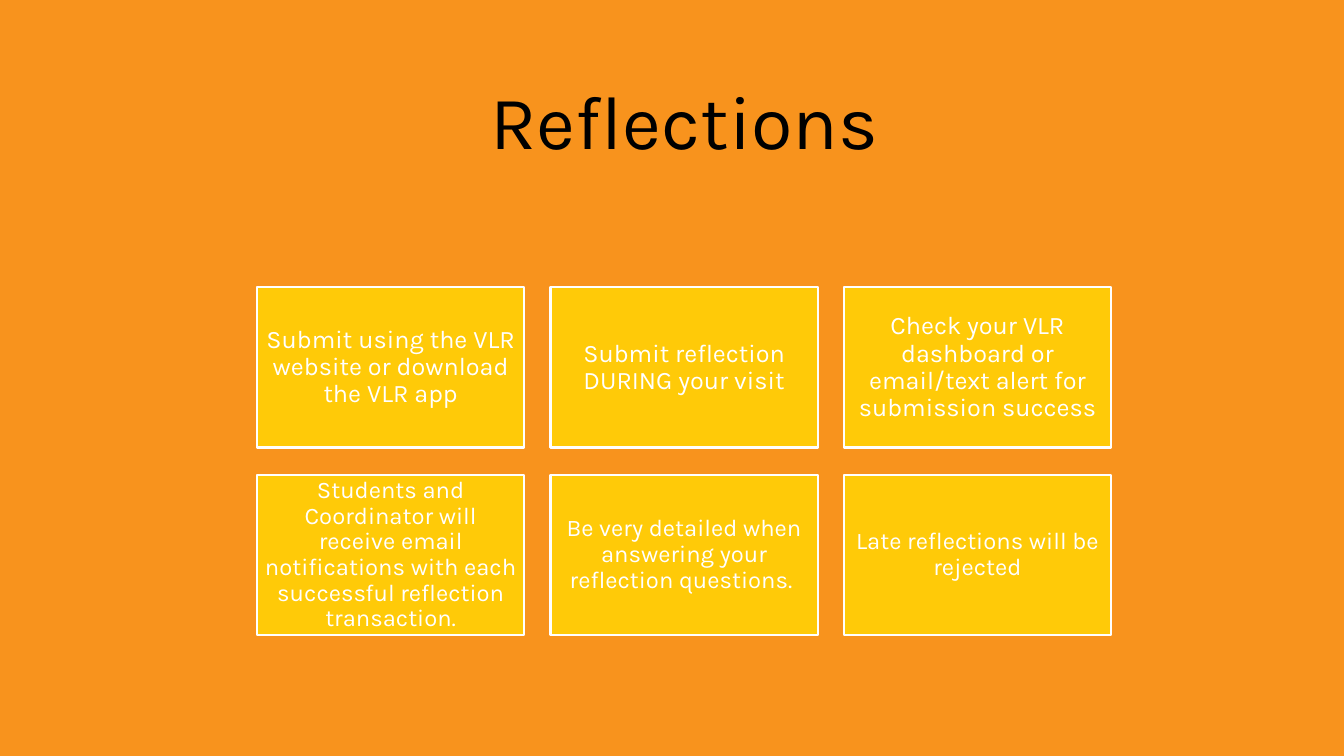
from pptx import Presentation
from pptx.dml.color import RGBColor
from pptx.enum import shapes, text
from pptx.util import Inches, Pt

ORANGE = RGBColor(0xF8, 0x93, 0x1D)
YELLOW = RGBColor(0xFF, 0xCA, 0x08)
WHITE = RGBColor(0xFF, 0xFF, 0xFF)
BLACK = RGBColor(0x00, 0x00, 0x00)

FONT = "Karla"
LEFT, TOP = 2.55, 2.85
CARD_W, CARD_H = 2.65, 1.59
STEP_X, STEP_Y = 2.91, 1.86
INSET = Inches(0.07)

# Each row of cards: text size, then the wording from left to right
CARD_ROWS = [
    (18, ["Submit using the VLR website or download the VLR app",
          "Submit reflection DURING your visit",
          "Check your VLR dashboard or email/text alert for submission success"]),
    (17, ["Students and Coordinator will receive email notifications "
          "with each successful reflection transaction.",
          "Be very detailed when answering your reflection questions. ",
          "Late reflections will be rejected"]),
]


def set_attrs(obj, values):
    for name, value in values.items():
        setattr(obj, name, value)


def write_text(sp, wording, size, color, frame_format):
    tf = sp.text_frame
    set_attrs(tf, {"word_wrap": True, **frame_format})
    p = tf.paragraphs[0]
    set_attrs(p, {"alignment": text.PP_ALIGN.CENTER, "line_spacing": 0.9})
    r = p.add_run()
    r.text = wording
    set_attrs(r.font, {"name": FONT, "size": Pt(size)})
    r.font.color.rgb = color


def add_title(s, wording):
    sp = s.shapes.add_textbox(Inches(2.09), Inches(0.47), Inches(9.4), Inches(1.22))
    write_text(sp, wording, 54, BLACK, {"vertical_anchor": text.MSO_ANCHOR.BOTTOM})


def add_card(s, x, y, wording, size):
    sp = s.shapes.add_shape(shapes.MSO_SHAPE.RECTANGLE, Inches(x), Inches(y),
                            Inches(CARD_W), Inches(CARD_H))
    sp.shadow.inherit = False
    sp.fill.solid()
    sp.fill.fore_color.rgb = YELLOW
    sp.line.color.rgb = WHITE
    sp.line.width = Pt(1.5)
    write_text(sp, wording, size, WHITE, {
        "vertical_anchor": text.MSO_ANCHOR.MIDDLE,
        "margin_left": INSET, "margin_right": INSET,
        "margin_top": INSET, "margin_bottom": INSET,
    })


def main():
    prs = Presentation()
    set_attrs(prs, {"slide_width": Inches(13.33), "slide_height": Inches(7.5)})
    s = prs.slides.add_slide(prs.slide_layouts[6])
    s.background.fill.solid()
    s.background.fill.fore_color.rgb = ORANGE

    add_title(s, "Reflections")
    for row, (size, wordings) in enumerate(CARD_ROWS):
        for col, wording in enumerate(wordings):
            add_card(s, LEFT + col * STEP_X, TOP + row * STEP_Y, wording, size)

    prs.save("out.pptx")


if __name__ == "__main__":
    main()
